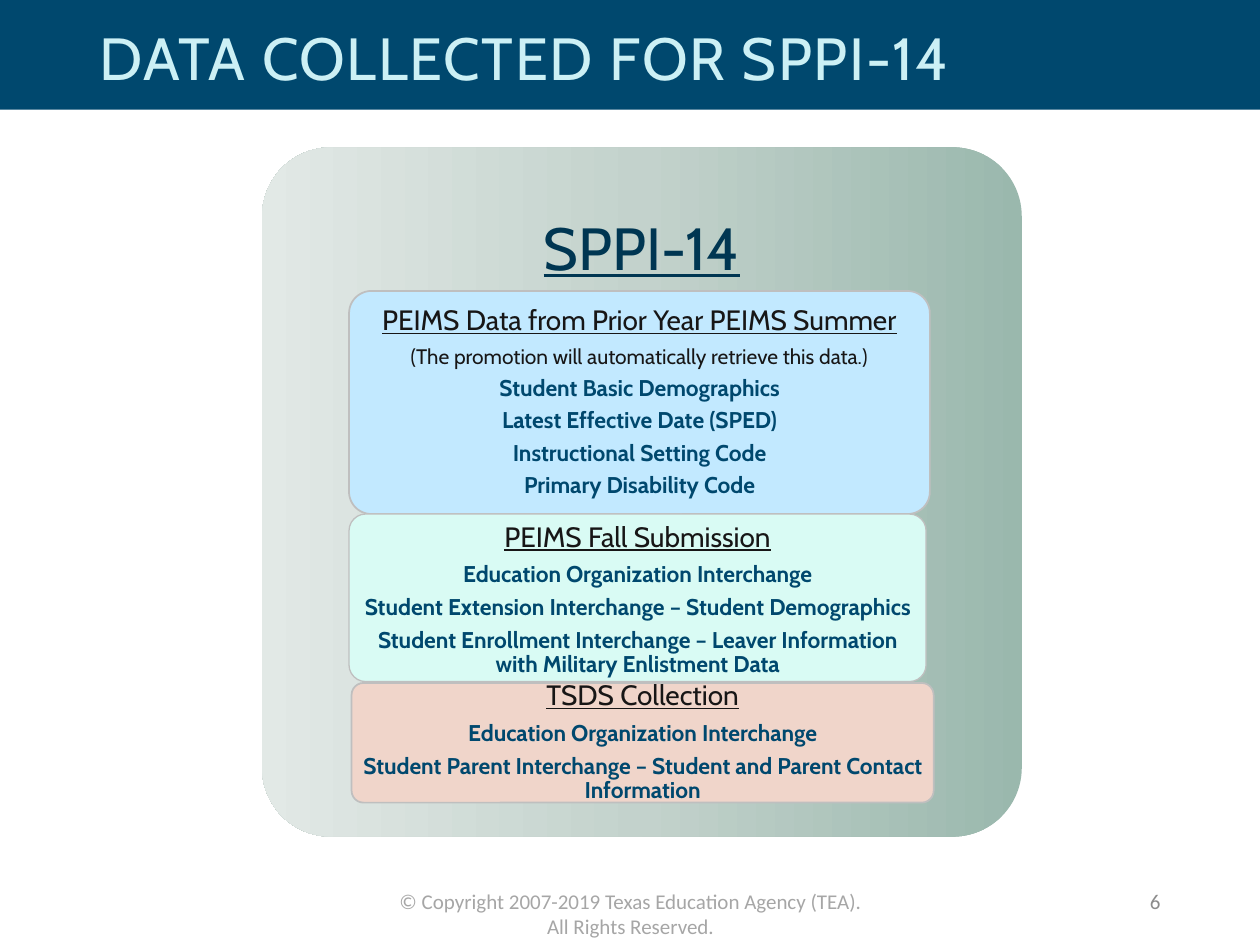
from copy import deepcopy
from dataclasses import dataclass

from pptx import Presentation
from pptx import util as u
from pptx.dml.color import RGBColor
from pptx.enum import shapes, text
from pptx.oxml.ns import qn


@dataclass(frozen=True)
class Theme:
    navy: str = "00486E"
    ice: str = "CCF0F5"
    deep: str = "003652"
    ink: str = "171616"
    border: str = "BFBFBF"
    blue: str = "C2E9FF"
    mint: str = "D9FBF4"
    peach: str = "F0D5CA"
    footer: str = "A6A6A6"
    number: str = "8C8C8C"
    sage: tuple = ("9AB8AD", "C3D2CC", "E2E9E6")
    face: str = "Cabin"
    small_face: str = "Calibri"
    title: int = 34
    heading: int = 16
    item: int = 13
    note: int = 12


THEME = Theme()
COLUMNS, ROWS = 100, 75
HEADING = dict(size=THEME.heading, color=THEME.ink, underline=True)
NOTE = dict(size=THEME.note, color=THEME.ink)
ITEM = dict(size=THEME.item, color=THEME.navy, bold=True)
BANNER = dict(size=THEME.title, color=THEME.deep, underline=True)


class SlideBuilder:
    def __init__(self, deck, theme):
        self.theme = theme
        self.column = deck.slide_width / COLUMNS
        self.row = deck.slide_height / ROWS
        self.page = deck.slides.add_slide(deck.slide_layouts[5])

    def area(self, left, top, width, height):
        return [int(v) for v in (left * self.column, top * self.row,
                                 width * self.column, height * self.row)]

    def fill_text(self, box, lines, align=text.PP_ALIGN.CENTER, anchor=text.MSO_ANCHOR.MIDDLE,
                  margins=(0.1, 0.05, 0.1, 0.05), face=None, spacing=0.9, gap=0.35):
        frame = box.text_frame
        sides = ("margin_left", "margin_top", "margin_right", "margin_bottom")
        settings = dict(zip(sides, map(u.Inches, margins)), word_wrap=True,
                        auto_size=text.MSO_AUTO_SIZE.NONE, vertical_anchor=anchor)
        for name, value in settings.items():
            setattr(frame, name, value)
        for index, (words, style) in enumerate(lines):
            para = frame.add_paragraph() if index else frame.paragraphs[0]
            layout = dict(alignment=align, line_spacing=spacing,
                          space_after=u.Pt(round(style["size"] * gap, 2)))
            for name, value in layout.items():
                setattr(para, name, value)
            span = para.add_run()
            span.text = words
            look = dict(style, name=face or self.theme.face, size=u.Pt(style["size"]))
            span.font.color.rgb = RGBColor.from_string(look.pop("color"))
            for name, value in look.items():
                setattr(span.font, name, value)

    def shape(self, kind, place, fill=None, line=None, weight=1):
        box = self.page.shapes.add_shape(kind, *self.area(*place))
        box.shadow.inherit = False
        if fill:
            box.fill.solid()
            box.fill.fore_color.rgb = RGBColor.from_string(fill)
        if line:
            box.line.color.rgb = RGBColor.from_string(line)
            box.line.width = u.Pt(weight)
        else:
            box.line.fill.background()
        return box

    def title_bar(self, words):
        bar = self.shape(shapes.MSO_SHAPE.RECTANGLE, (0, 0, COLUMNS, 8.7), self.theme.navy)
        title = self.page.shapes.title
        bar._element.addnext(title._element)
        title.left, title.top, title.width, title.height = self.area(6.9, 0.5, 80, 8.7)
        style = dict(size=self.theme.title, color=self.theme.ice)
        self.fill_text(title, [(words, style)], align=text.PP_ALIGN.LEFT, gap=0)
        title.text_frame.paragraphs[0].runs[0].font._element.set("spc", "100")

    def gradient_panel(self, place, colors):
        panel = self.shape(shapes.MSO_SHAPE.ROUNDED_RECTANGLE, place)
        panel.adjustments[0] = 0.1
        panel.fill.gradient()
        panel.fill.gradient_angle = 180
        stops = panel._element.spPr.find(qn("a:gradFill")).find(qn("a:gsLst"))
        stops.append(deepcopy(stops[-1]))
        for index, (stop, color) in enumerate(zip(panel.fill.gradient_stops, colors)):
            stop.position = index / (len(colors) - 1)
            stop.color.rgb = RGBColor.from_string(color)

    def card(self, place, fill, lines, weight=1, top_margin=0.03):
        card = self.shape(shapes.MSO_SHAPE.ROUNDED_RECTANGLE, place, fill,
                          self.theme.border, weight)
        card.adjustments[0] = 0.1
        self.fill_text(card, lines, margins=(0.04, top_margin, 0.04, 0.03))

    def label(self, place, words, style, **options):
        box = self.page.shapes.add_textbox(*self.area(*place))
        self.fill_text(box, [(words, style)], **options)


def section(heading, items, notes=()):
    return ([(heading, HEADING)] + [(note, NOTE) for note in notes]
            + [(item, ITEM) for item in items])


def main():
    deck = Presentation()
    deck.slide_width, deck.slide_height = u.Inches(10), u.Inches(7.5)
    slide = SlideBuilder(deck, THEME)
    slide.title_bar("DATA COLLECTED FOR SPPI-14")
    slide.gradient_panel((20.8, 11.7, 60.3, 54.7), THEME.sage)
    slide.label((20.8, 11.7, 60.3, 16.4), "SPPI-14", BANNER, margins=(0.14,) * 4)

    slide.card((27.7, 23.1, 46.1, 17.7), THEME.blue, section(
        "PEIMS Data from Prior Year PEIMS Summer",
        ["Student Basic Demographics", "Latest Effective Date (SPED)",
         "Instructional Setting Code", "Primary Disability Code"],
        notes=["(The promotion will automatically retrieve this data.)"]))
    slide.card((27.9, 54.2, 46.2, 9.5), THEME.peach, section(
        "TSDS Collection",
        ["Education Organization Interchange",
         "Student Parent Interchange – Student and Parent Contact Information"]))
    slide.card((27.7, 40.8, 45.8, 13.3), THEME.mint, section(
        "PEIMS Fall Submission",
        ["Education Organization Interchange",
         "Student Extension Interchange – Student Demographics",
         "Student Enrollment Interchange – Leaver Information with Military Enlistment Data"]),
        weight=0.75, top_margin=0.07)

    small = dict(face=THEME.small_face, spacing=1.0, gap=0)
    slide.label((30.4, 70, 39.3, 5),
                "© Copyright 2007-2019 Texas Education Agency (TEA). All Rights Reserved.",
                dict(size=THEME.note, color=THEME.footer), anchor=text.MSO_ANCHOR.TOP, **small)
    slide.label((70.6, 69.5, 22.5, 4), "6", dict(size=THEME.note, color=THEME.number),
                align=text.PP_ALIGN.RIGHT, **small)
    deck.save("out.pptx")


if __name__ == "__main__":
    main()
